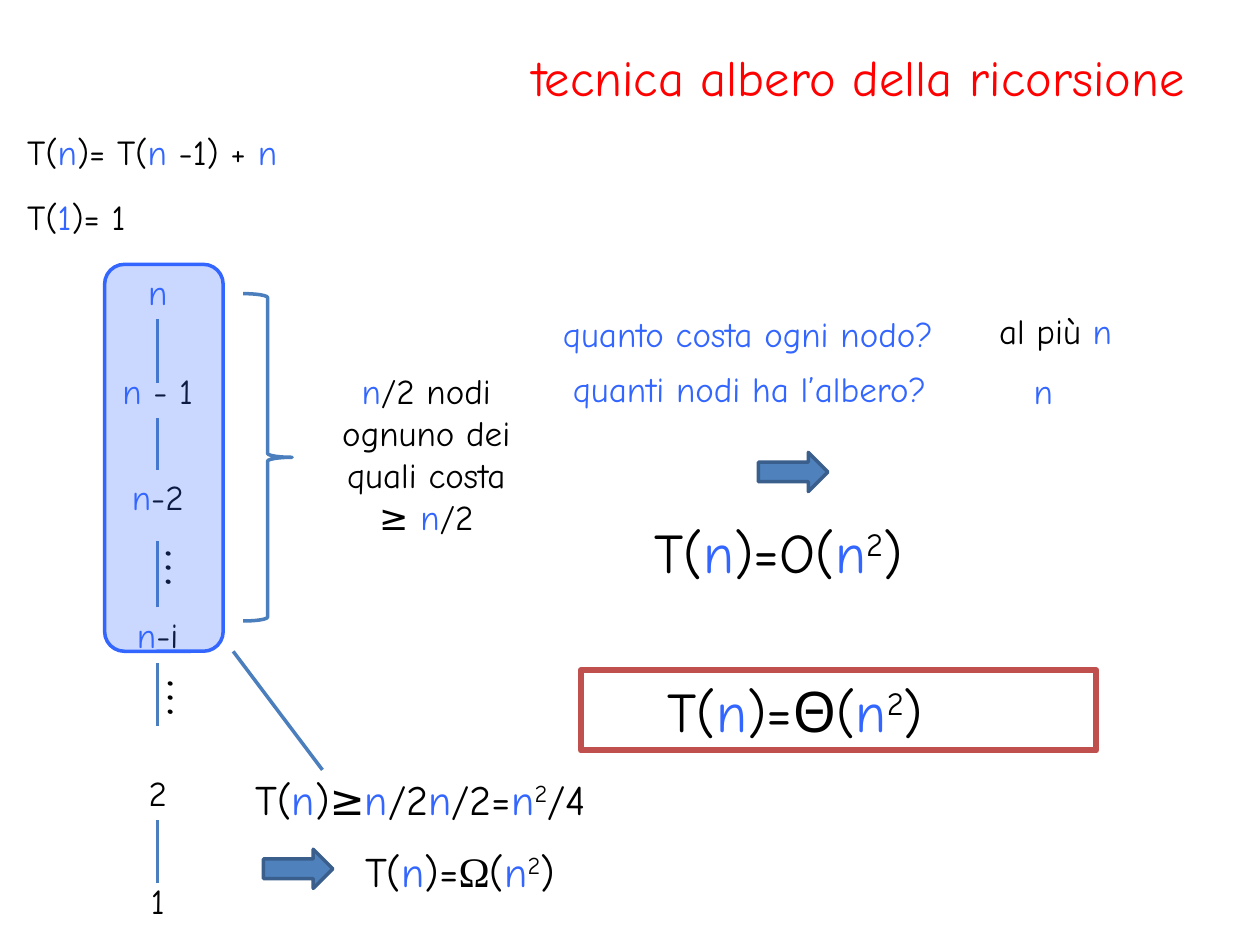
from lxml.etree import SubElement
from pptx import Presentation
from pptx.dml.color import RGBColor
from pptx.enum.shapes import MSO_CONNECTOR as Connector, MSO_SHAPE as Shape
from pptx.enum.text import MSO_ANCHOR as Anchor, MSO_AUTO_SIZE as AutoSize, PP_ALIGN as Align
from pptx.oxml.ns import qn
from pptx.util import Cm, Pt

COLORS = {
    "ink": "000000", "variable": "3366FF", "title": "FF0000", "paper": "FFFFFF",
    "edge": "4B7EBC", "arrow": "4F81BD", "arrow_line": "3A5F8C", "result": "C0504D",
}
FONT = "Comic Neue"

# Recurring pieces of formulas: (text, format)
N = ("n", {"color": "variable"})
SQUARE = ("2", {"baseline": "30000"})
OMEGA = ("Ω", {"name": "Times New Roman"})


def color(name):
    return RGBColor.from_string(COLORS[name])


class SlideBuilder:
    """Holds the slide and its style."""

    def __init__(self, slide):
        self.slide = slide
        self.shapes = slide.shapes

    def fill_text(self, frame, runs, size=20, align=Align.LEFT, inset=0.25):
        settings = {"word_wrap": True, "auto_size": AutoSize.SHAPE_TO_FIT_TEXT,
                    "vertical_anchor": Anchor.TOP, "margin_left": Cm(inset)}
        for key, value in settings.items():
            setattr(frame, key, value)
        paragraph = frame.paragraphs[0]
        paragraph.alignment = align
        for item in runs:
            text, style = (item, {}) if isinstance(item, str) else item
            run = paragraph.add_run()
            run.text = text
            font = {"name": style.get("name", FONT), "size": Pt(size)}
            for key, value in font.items():
                setattr(run.font, key, value)
            run.font.color.rgb = color(style.get("color", "ink"))
            if "baseline" in style:
                run.font._element.set("baseline", style["baseline"])

    def title(self, text, *box):
        title = self.shapes.title
        for key, value in zip(("left", "top", "width", "height"), box):
            setattr(title, key, Cm(value))
        self.fill_text(title.text_frame, [(text, {"color": "title"})], 28.8, Align.RIGHT)
        title.text_frame.auto_size = AutoSize.NONE
        title.text_frame.vertical_anchor = Anchor.MIDDLE

    def text(self, runs, *box, rotation=0, **style):
        shape = self.shapes.add_textbox(*map(Cm, box))
        shape.rotation = rotation
        self.fill_text(shape.text_frame, runs, **style)

    def shape(self, kind, *box, line, width=2, fill=None, opacity=None):
        shape = self.shapes.add_shape(kind, *map(Cm, box))
        shape.shadow.inherit = False
        shape.line.color.rgb = color(line)
        shape.line.width = Pt(width)
        if fill is None:
            shape.fill.background()
        else:
            shape.fill.solid()
            shape.fill.fore_color.rgb = color(fill)
        if opacity is not None:
            fill_color = shape._element.spPr.find(qn("a:solidFill"))[0]
            SubElement(fill_color, qn("a:alpha")).set("val", str(opacity * 1000))
        return shape

    def arrow(self, left, top):
        self.shape(Shape.RIGHT_ARROW, left, top, 1.4, 0.79, line="arrow_line", fill="arrow")

    def line(self, *ends, width=1.5):
        connector = self.shapes.add_connector(Connector.STRAIGHT, *map(Cm, ends))
        connector.line.color.rgb = color("edge")
        connector.line.width = Pt(width)
        SubElement(connector._element.spPr, qn("a:effectLst"))


def main():
    presentation = Presentation()
    presentation.slide_width, presentation.slide_height = Cm(25.4), Cm(19.05)
    builder = SlideBuilder(presentation.slides.add_slide(presentation.slide_layouts[5]))
    builder.title("tecnica albero della ricorsione", 1.27, 0.76, 22.86, 1.55)

    # Recurrence
    builder.text(["T(", N, ")= T(", N, " -1) + ", N], 0.3, 2.51, 8.51, 1.11)
    builder.text(["T(", ("1", N[1]), ")= 1"], 0.3, 3.81, 3.2, 1.11)

    # Questions and answers
    builder.text([("quanto costa ogni nodo?", N[1])], 11.1, 6.17, 10.8, 1.11)
    builder.text(["al più ", N], 19.89, 6.12, 3.2, 1.11)
    builder.text([("quanti nodi ha l’albero?", N[1])], 11.3, 7.29, 9.8, 1.11)
    builder.text([N], 19.89, 7.32, 2.21, 1.11, inset=0.95)

    # Upper bound
    builder.arrow(15.29, 9.12)
    builder.text(["T(", N, ")=O(", N, SQUARE, ")"], 12.95, 10.31, 6.35, 1.62, size=32)

    # Recursion tree
    axis = 3.18
    nodes = [([N], 5.33, 1.19), ([("n ", N[1]), "- 1"], 7.32, 3), ([N, "-2"], 9.47, 2.39),
             ([N, "-i"], 12.24, 2.39), (["2"], 15.42, 2.39), (["1"], 17.6, 1.19)]
    for runs, top, width in nodes:
        builder.text(runs, axis - width / 2, top, width, 1.11, align=Align.CENTER)
    for bottom, top in [(7.72, 6.43), (9.47, 8.43), (12.24, 10.9), (14.63, 13.36), (17.81, 16.54)]:
        builder.line(axis, bottom, axis, top)
    for left, top in [(3.3, 10.52), (3.35, 13.13)]:
        builder.text(["…"], left, top, 0.99, 1.62, rotation=90, size=32)

    # Final result
    result = builder.shape(Shape.RECTANGLE, 11.71, 13.51, 10.39, 1.62,
                           line="result", width=3.5, fill="paper")
    builder.fill_text(result.text_frame, ["T(", N, ")=Θ(", N, SQUARE, ")"], 32, inset=1.75)

    # Upper half of the tree and lower bound
    brace = builder.shape(Shape.RIGHT_BRACE, 4.9, 5.92, 0.99, 6.6, line="edge")
    brace.adjustments[0] = 0.08
    builder.text([N, "/2 nodi ognuno dei quali costa ≥ ", N, "/2"],
                 6.5, 7.32, 4.19, 3.68, align=Align.CENTER)
    builder.text(["T(", N, ")≥", N, "/2", N, "/2=", N, SQUARE, "/4"],
                 4.9, 15.47, 8.61, 1.27, size=24)
    builder.arrow(5.31, 17.12)
    builder.text(["T(", N, ")=", OMEGA, "(", N, SQUARE, ")"], 7.11, 16.92, 6.35, 1.27, size=24)
    builder.shape(Shape.ROUNDED_RECTANGLE, 2.11, 5.33, 2.39, 7.8,
                  line="variable", fill="variable", opacity=26)
    builder.line(4.7, 13.13, 6.5, 15.52, width=2)

    presentation.save("out.pptx")


if __name__ == "__main__":
    main()
